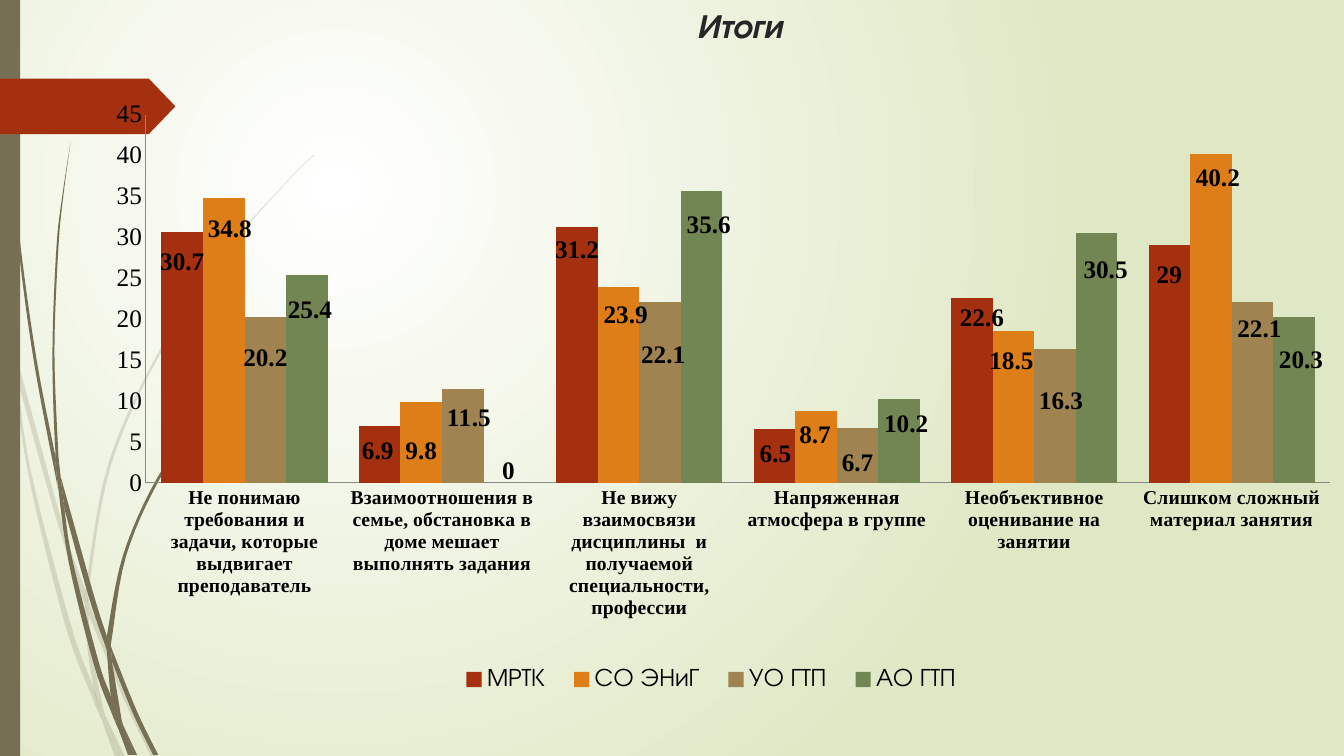
from dataclasses import dataclass
from typing import Any

from lxml.etree import SubElement
from pptx import Presentation
from pptx.chart.data import CategoryChartData
from pptx.dml.color import RGBColor
from pptx.enum.chart import XL_CHART_TYPE, XL_LABEL_POSITION, XL_LEGEND_POSITION, XL_TICK_MARK
from pptx.enum.shapes import MSO_SHAPE
from pptx.enum.text import PP_ALIGN
from pptx.oxml.ns import qn
from pptx.util import Inches, Pt

CELL = Inches(0.01)
COLUMNS, ROWS = 1333, 750
CURVE_STEPS = 6
COLORS = {"white": "FFFFFF", "lime": "DFE8C4", "stem": "766F54", "red": "A53010", "orange": "DE7E18",
          "sand": "9F8351", "green": "728653", "heading": "262626", "text": "000000", "axis": "898989"}
SANS, SERIF = "TeX Gyre Adventor", "Times New Roman"
HEADING_FONT = {"name": SANS, "size": Pt(24), "bold": True, "italic": True}
CHART_FONT = {"name": SANS, "size": Pt(18)}
VALUE_FONT = {"name": SERIF, "size": Pt(18), "bold": False}
CATEGORY_FONT = {"name": SERIF, "size": Pt(14), "bold": True}
LABEL_FONT = {"name": SERIF, "size": Pt(18), "bold": True}
VALUE_SCALE = {"minimum_scale": 0, "maximum_scale": 45, "major_unit": 5, "has_major_gridlines": False}
TICKS = {"major_tick_mark": XL_TICK_MARK.NONE, "minor_tick_mark": XL_TICK_MARK.NONE}
LEGEND = {"position": XL_LEGEND_POSITION.BOTTOM, "include_in_layout": False}
EDGES = {"xMode": "edge", "yMode": "edge"}
PLOT_SHARES = {"layoutTarget": "inner", **EDGES, "x": 0.056, "y": 0.053, "w": 0.944, "h": 0.592}
LEGEND_SHARES = {**EDGES, "x": 0.295, "y": 0.923, "w": 0.423, "h": 0.08}

Knots = list[tuple[float, float]]

@dataclass(frozen=True)
class Area:
    column: int
    row: int
    columns: int
    rows: int

    def emu(self) -> tuple[int, ...]:
        return tuple(CELL * n for n in (self.column, self.row, self.columns, self.rows))

@dataclass(frozen=True)
class Blade:
    there: Knots
    back: Knots

@dataclass(frozen=True)
class College:
    name: str
    color: str
    shares: list[float]
    label_shifts: Knots

CHART_AREA = Area(75, 81, 1245, 617)
HEADING_AREA = Area(246, 0, 975, 79)
FAINT_BLADES = [
    Blade([(0, 282), (9, 322), (11, 350)], [(10, 344), (0, 299)]),
    Blade([(14, 345), (62, 520), (85, 586)], [(84, 599), (58, 522), (17, 376)]),
    Blade([(88, 596), (92, 607), (127, 692), (155, 751)], [(150, 751), (123, 694), (88, 610)]),
    Blade([(105, 711), (124, 751)], [(119, 751)]),
    Blade([(11, 350), (28, 470), (65, 621), (92, 693), (101, 714)],
          [(99, 707), (93, 683), (70, 619), (31, 469), (17, 376)]),
    Blade([(84, 599), (87, 646), (93, 683), (96, 692), (105, 711)], [(103, 706), (91, 646), (88, 610), (88, 608)]),
    Blade([(312, 153), (289, 175), (228, 244), (158, 348), (107, 461), (85, 584), (85, 586)],
          [(88, 596), (88, 584), (110, 462), (160, 349), (229, 245), (290, 175), (312, 154)]),
    Blade([(101, 714), (114, 751)], [(119, 751)]),
    Blade([(85, 586), (84, 599), (88, 608)], [(88, 610), (88, 596)]),
    Blade([(93, 683), (99, 707), (101, 714), (119, 751)], [(105, 711), (96, 692)]),
]
DARK_BLADES = [
    Blade([(3, 0), (4, 48), (7, 110), (17, 233), (33, 355), (56, 477), (57, 481)],
          [(55, 457), (55, 453), (36, 355), (19, 232), (8, 109), (5, 48), (4, 0)]),
    Blade([(60, 472), (93, 590), (106, 631)], [(106, 645), (88, 592), (64, 505)]),
    Blade([(110, 641), (113, 649), (136, 706), (157, 749)], [(152, 749), (132, 708), (111, 656)]),
    Blade([(57, 477), (68, 557), (93, 659), (111, 708), (117, 722)],
          [(116, 717), (110, 691), (98, 657), (72, 556), (64, 505)]),
    Blade([(70, 141), (62, 193), (56, 245), (52, 349), (55, 449), (60, 472)],
          [(58, 453), (54, 349), (58, 245), (63, 193), (70, 141)]),
    Blade([(122, 719), (136, 749)], [(133, 749)]),
    Blade([(55, 449), (55, 453), (57, 477), (64, 505)], [(60, 472)]),
    Blade([(260, 344), (245, 358), (204, 405), (156, 474), (122, 551), (106, 631)],
          [(110, 641), (111, 633), (125, 552), (158, 476), (205, 406), (245, 359), (260, 344)]),
    Blade([(117, 722), (127, 749)], [(131, 749)]),
    Blade([(106, 645), (110, 691), (116, 706), (122, 719)], [(121, 716), (111, 656), (109, 651)]),
    Blade([(106, 631), (106, 645), (109, 651)], [(111, 656), (110, 641)]),
    Blade([(110, 691), (116, 717), (117, 722), (130, 749)], [(133, 749), (122, 719), (116, 706)]),
]
DIFFICULTIES = [
    "Не понимаю требования и задачи, которые выдвигает преподаватель",
    "Взаимоотношения в семье, обстановка в доме мешает выполнять задания",
    "Не вижу взаимосвязи дисциплины  и получаемой специальности, профессии",
    "Напряженная атмосфера в группе", "Необъективное оценивание на занятии", "Слишком сложный материал занятия"]
COLLEGES = [
    College("МРТК", "red", [30.7, 6.9, 31.2, 6.5, 22.6, 29],
            [(0, 48), (-2, 42), (0, 40), (1, 42), (10, 38), (0, 47)]),
    College("СО ЭНиГ", "orange", [34.8, 9.8, 23.9, 8.7, 18.5, 40.2],
            [(6, 48), (0, 66), (7, 45), (-1, 41), (-2, 47), (7, 42)]),
    College("УО ГТП", "sand", [20.2, 11.5, 22.1, 6.7, 16.3, 22.1],
            [(0, 58), (6, 47), (3, 70), (0, 52), (6, 69), (7, 44)]),
    College("АО ГТП", "green", [25.4, 0, 35.6, 10.2, 30.5, 20.3],
            [(3, 52), (4, 6), (7, 51), (7, 42), (9, 54), (7, 61)]),
]

def rgb(color: str) -> RGBColor:
    return RGBColor.from_string(COLORS[color])

def apply(target: Any, values: dict[str, Any]) -> None:
    for attribute, value in values.items():
        setattr(target, attribute, value)

def style_font(font: Any, values: dict[str, Any], color: str = "text") -> None:
    apply(font, values)
    font.color.rgb = rgb(color)

def paint(shape: Any, color: str, opacity: int = 100) -> None:
    shape.shadow.inherit = False
    shape.fill.solid()
    shape.fill.fore_color.rgb = rgb(color)
    shape.line.fill.background()
    if opacity < 100:
        tint = shape.fill._xPr.find(".//" + qn("a:srgbClr"))
        SubElement(tint, qn("a:alpha")).set("val", str(opacity * 1000))

def smooth(knots: Knots) -> Knots:
    padded = [knots[0], *knots, knots[-1]]
    return [tuple((2 * q + (r - p) * t + (2 * p - 5 * q + 4 * r - s) * t ** 2
                   + (3 * q - p - 3 * r + s) * t ** 3) / 2 for p, q, r, s in zip(*corners))
            for corners in zip(padded, padded[1:], padded[2:], padded[3:])
            for t in (step / CURVE_STEPS for step in range(CURVE_STEPS))] + [knots[-1]]

def draw_background(slide: Any) -> None:
    fill = slide.background.fill
    fill.gradient()
    for stop, color in zip(fill.gradient_stops, ("white", "lime")):
        stop.color.rgb = rgb(color)
    gradient = slide.element.find(".//" + qn("a:gradFill"))
    gradient.remove(gradient.find(qn("a:lin")))
    circle = SubElement(gradient, qn("a:path"), {"path": "circle"})
    SubElement(circle, qn("a:fillToRect"), {"l": "50000", "t": "50000", "r": "100000", "b": "100000"})

def draw_blade(slide: Any, blade: Blade, opacity: int) -> None:
    outline = [(round(x * CELL), round(y * CELL)) for x, y in smooth(blade.there) + smooth(blade.back)]
    builder = slide.shapes.build_freeform(*outline[0])
    builder.add_line_segments(outline[1:], close=True)
    paint(builder.convert_to_shape(), "stem", opacity)

def draw_heading(slide: Any) -> None:
    frame = slide.shapes.add_textbox(*HEADING_AREA.emu()).text_frame
    apply(frame, {"word_wrap": True, "text": "Итоги"})
    frame.paragraphs[0].alignment = PP_ALIGN.CENTER
    style_font(frame.paragraphs[0].runs[0].font, HEADING_FONT, "heading")

def place(parent: Any, index: int, settings: dict[str, Any]) -> None:
    for old in parent.findall(qn("c:layout")):
        parent.remove(old)
    layout = SubElement(parent, qn("c:layout"))
    manual = SubElement(layout, qn("c:manualLayout"))
    for tag, value in settings.items():
        SubElement(manual, qn(f"c:{tag}")).set("val", str(value))
    parent.insert(index, layout)

def label_bars(bars: Any, college: College) -> None:
    bars.data_labels.show_value = True
    style_font(bars.data_labels.font, LABEL_FONT)
    for index in range(len(college.shares)):
        label = bars.points[index].data_label
        style_font(label.font, LABEL_FONT)
        label.position = XL_LABEL_POSITION.OUTSIDE_END
    for element, (dx, dy) in zip(bars._element.iter(qn("c:dLbl")), college.label_shifts):
        place(element, 1, {"x": dx / CHART_AREA.columns, "y": dy / CHART_AREA.rows})
    for leader in bars._element.iter(qn("c:showLeaderLines")):
        leader.set("val", "0")

def draw_chart(slide: Any) -> None:
    data = CategoryChartData()
    data.categories = DIFFICULTIES
    for college in COLLEGES:
        data.add_series(college.name, college.shares)
    chart = slide.shapes.add_chart(XL_CHART_TYPE.COLUMN_CLUSTERED, *CHART_AREA.emu(), data).chart
    apply(chart, {"has_title": False, "has_legend": True})
    apply(chart.legend, LEGEND)
    apply(chart.value_axis, VALUE_SCALE)
    for font in (chart.font, chart.legend.font):
        style_font(font, CHART_FONT)
    for axis, values in ((chart.category_axis, CATEGORY_FONT), (chart.value_axis, VALUE_FONT)):
        apply(axis, TICKS)
        axis.format.line.color.rgb = rgb("axis")
        style_font(axis.tick_labels.font, values)
    apply(chart.plots[0], {"gap_width": 75, "overlap": 0, "vary_by_categories": False})
    for bars, college in zip(chart.plots[0].series, COLLEGES):
        bars.format.fill.solid()
        bars.format.fill.fore_color.rgb = rgb(college.color)
        label_bars(bars, college)
    place(chart._chartSpace.find(".//" + qn("c:plotArea")), 0, PLOT_SHARES)
    place(chart.legend._element, 1, LEGEND_SHARES)

def main() -> None:
    deck = Presentation()
    apply(deck, {"slide_width": CELL * COLUMNS, "slide_height": CELL * ROWS})
    slide = deck.slides.add_slide(deck.slide_layouts[6])
    draw_background(slide)
    for blades, opacity in ((FAINT_BLADES, 20), (DARK_BLADES, 100)):
        for blade in blades:
            draw_blade(slide, blade, opacity)
    paint(slide.shapes.add_shape(MSO_SHAPE.RECTANGLE, *Area(0, 0, 20, ROWS).emu()), "stem")
    pointer = slide.shapes.add_shape(MSO_SHAPE.PENTAGON, *Area(0, 78, 174, 55).emu())
    pointer.adjustments[0] = 0.48
    paint(pointer, "red")
    draw_heading(slide)
    draw_chart(slide)
    deck.save("out.pptx")

if __name__ == "__main__":
    main()
